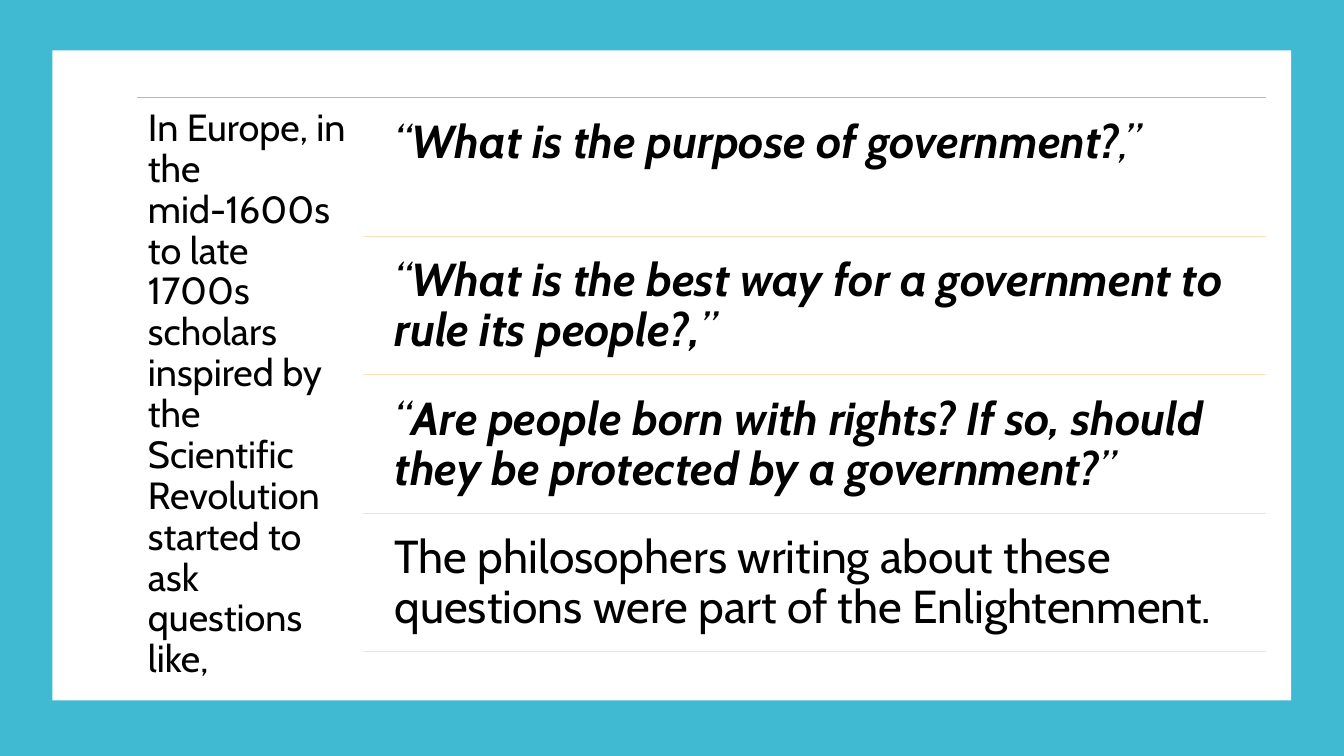
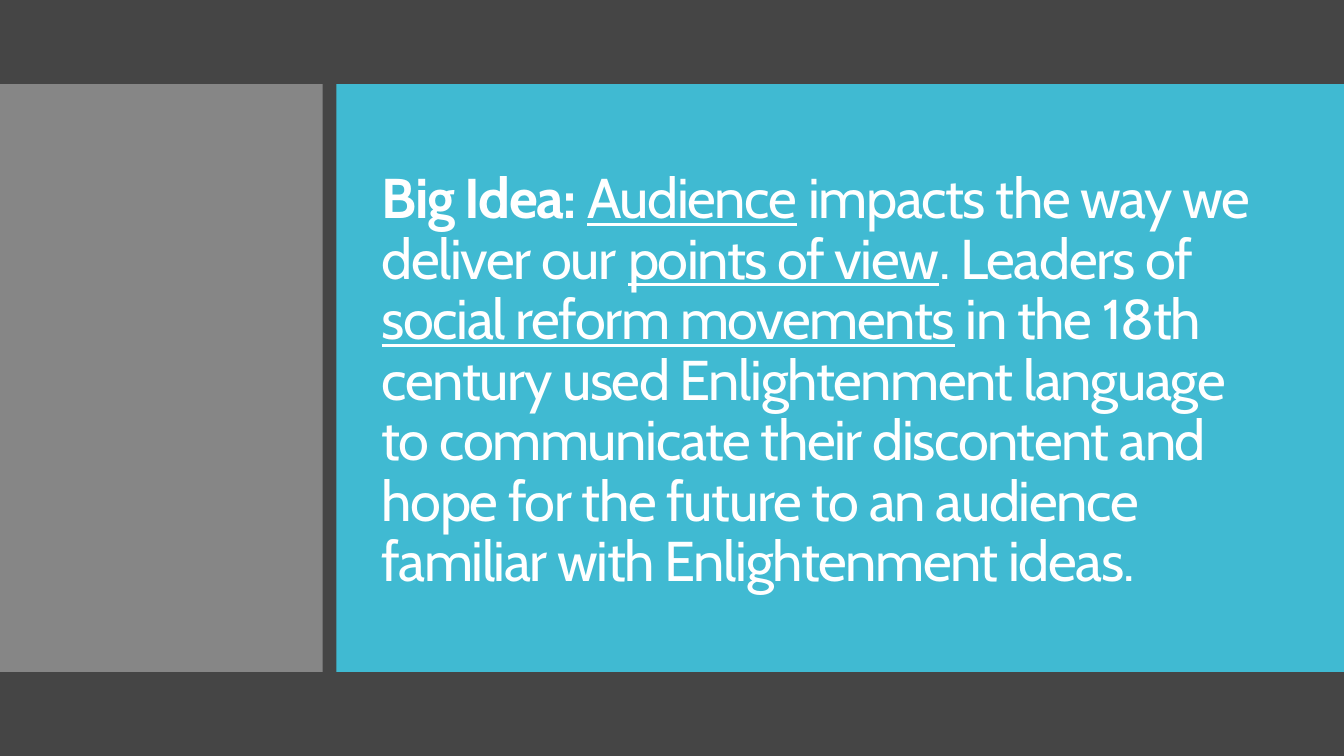
from lxml.etree import SubElement
from pptx import Presentation
from pptx.dml.color import RGBColor
from pptx.enum.shapes import MSO_CONNECTOR, MSO_SHAPE
from pptx.enum.text import MSO_ANCHOR, MSO_AUTO_SIZE, PP_ALIGN
from pptx.oxml.ns import qn
from pptx.util import Cm, Pt

SLIDE_W, SLIDE_H = 33.87, 19.05
TITLE_ONLY, BLANK = 5, 6


def rgb(hex_code):
    return RGBColor.from_string(hex_code)


def write(frame, pieces, size, color, font="Cabin", italic=False, spacing=None,
          inset=(0.25, 0.13), anchor=MSO_ANCHOR.TOP):
    """Fill a frame with one paragraph of (text, emphasis) pieces.

    Emphasis is "", "bold" or "underline"; spacing is in points,
    inset is (horizontal, vertical) in centimetres.
    """
    frame.word_wrap = True
    frame.auto_size = MSO_AUTO_SIZE.NONE
    frame.vertical_anchor = anchor
    frame.margin_left = frame.margin_right = Cm(inset[0])
    frame.margin_top = frame.margin_bottom = Cm(inset[1])
    paragraph = frame.paragraphs[0]
    paragraph.alignment = PP_ALIGN.LEFT
    paragraph.line_spacing = 0.9
    for text, emphasis in pieces:
        run = paragraph.add_run()
        run.text = text
        run.font.name = font
        run.font.size = Pt(size)
        run.font.color.rgb = rgb(color)
        run.font.italic = italic
        run.font.bold = emphasis == "bold"
        run.font.underline = emphasis == "underline"
        if spacing is not None:
            run._r.get_or_add_rPr().set("spc", str(int(spacing * 100)))


class Deck:
    TEAL = "40BAD2"
    DARK = "454545"
    GREY = "C8C8C8"
    WHITE = "FFFFFF"
    BLACK = "000000"
    GOLD = "FAB900"
    PALE_GOLD = "FDE0BD"

    def __init__(self):
        self.presentation = Presentation()
        self.presentation.slide_width = Cm(SLIDE_W)
        self.presentation.slide_height = Cm(SLIDE_H)
        self.slide = None

    def new_slide(self, layout, background):
        layouts = self.presentation.slide_layouts
        self.slide = self.presentation.slides.add_slide(layouts[layout])
        fill = self.slide.background.fill
        fill.solid()
        fill.fore_color.rgb = rgb(background)

    def panel(self, left, top, width, height, color, opacity=100):
        panel = self.slide.shapes.add_shape(
            MSO_SHAPE.RECTANGLE, Cm(left), Cm(top), Cm(width), Cm(height))
        panel.shadow.inherit = False
        panel.line.fill.background()
        panel.fill.solid()
        panel.fill.fore_color.rgb = rgb(color)
        if opacity < 100:
            color_node = panel._element.spPr.find(qn("a:solidFill"))[0]
            SubElement(color_node, qn("a:alpha")).set("val", str(opacity * 1000))

    def rule(self, left, right, y, color):
        rule = self.slide.shapes.add_connector(
            MSO_CONNECTOR.STRAIGHT, Cm(left), Cm(y), Cm(right), Cm(y))
        rule.line.color.rgb = rgb(color)
        rule.line.width = Pt(0.85)
        SubElement(rule._element.spPr, qn("a:effectLst"))

    def text(self, left, top, width, height, pieces, **style):
        box = self.slide.shapes.add_textbox(
            Cm(left), Cm(top), Cm(width), Cm(height))
        write(box.text_frame, pieces, color=self.BLACK, **style)

    def title(self, left, top, width, height, pieces, **style):
        title = self.slide.shapes.title
        title.left, title.top = Cm(left), Cm(top)
        title.width, title.height = Cm(width), Cm(height)
        write(title.text_frame, pieces, color=self.WHITE,
              anchor=MSO_ANCHOR.MIDDLE, **style)


def questions_slide(deck):
    deck.new_slide(BLANK, deck.TEAL)
    deck.panel(1.32, 1.27, 31.22, 16.38, deck.WHITE)

    left, right, top = 3.45, 31.9, 2.46
    deck.rule(left, right, top, deck.GOLD)
    introduction = ("In Europe, in the mid-1600s to late 1700s scholars inspired "
                    "by the Scientific Revolution started to ask questions like,")
    deck.text(left, top, 5.69, 14.12, [(introduction, "")],
              size=27, inset=(0.28, 0.28))

    statements = [
        ([("“", ""), ("What is the purpose of government?", "bold"),
          (",”", "")], True),
        ([("“", ""),
          ("What is the best way for a government to rule its people?,", "bold"),
          ("”", "")], True),
        ([("“", ""),
          ("Are people born with rights? If so, should they be protected "
           "by a government?", "bold"),
          ("”", "")], True),
        ([("The philosophers writing about these questions were part of "
           "the Enlightenment.", "")], False),
    ]
    statement_left, row_height, row_step = 9.58, 3.33, 3.49
    for row, (pieces, is_question) in enumerate(statements):
        row_top = 2.62 + row * row_step
        deck.text(statement_left, row_top, right - statement_left, row_height,
                  pieces, size=33, italic=is_question, inset=(0.36, 0.36))
        deck.rule(9.14, right, row_top + row_height, deck.PALE_GOLD)


def big_idea_slide(deck):
    deck.new_slide(TITLE_ONLY, deck.DARK)
    band_top, side_width, gap = 2.12, 8.13, 0.35
    band_height = SLIDE_H - 2 * band_top
    main_left = side_width + gap
    deck.panel(0, band_top, side_width, band_height, deck.GREY, opacity=50)
    deck.panel(main_left, band_top, SLIDE_W - main_left, band_height, deck.TEAL)
    deck.title(9.37, 3.02, 22.73, 13.21, [
        ("Big Idea: ", "bold"),
        ("Audience", "underline"),
        (" impacts the way we deliver our ", ""),
        ("points of view", "underline"),
        (". Leaders of ", ""),
        ("social reform movements", "underline"),
        (" in the 18th century used Enlightenment language to communicate "
         "their discontent and hope for the future to an audience familiar "
         "with Enlightenment ideas.", ""),
    ], size=40, spacing=-1)
    # The title placeholder comes first in the tree, so raise it above the panels.
    tree = deck.slide.shapes._spTree
    tree.append(deck.slide.shapes.title._element)


def main():
    deck = Deck()
    questions_slide(deck)
    big_idea_slide(deck)
    deck.presentation.save("out.pptx")


if __name__ == "__main__":
    main()
